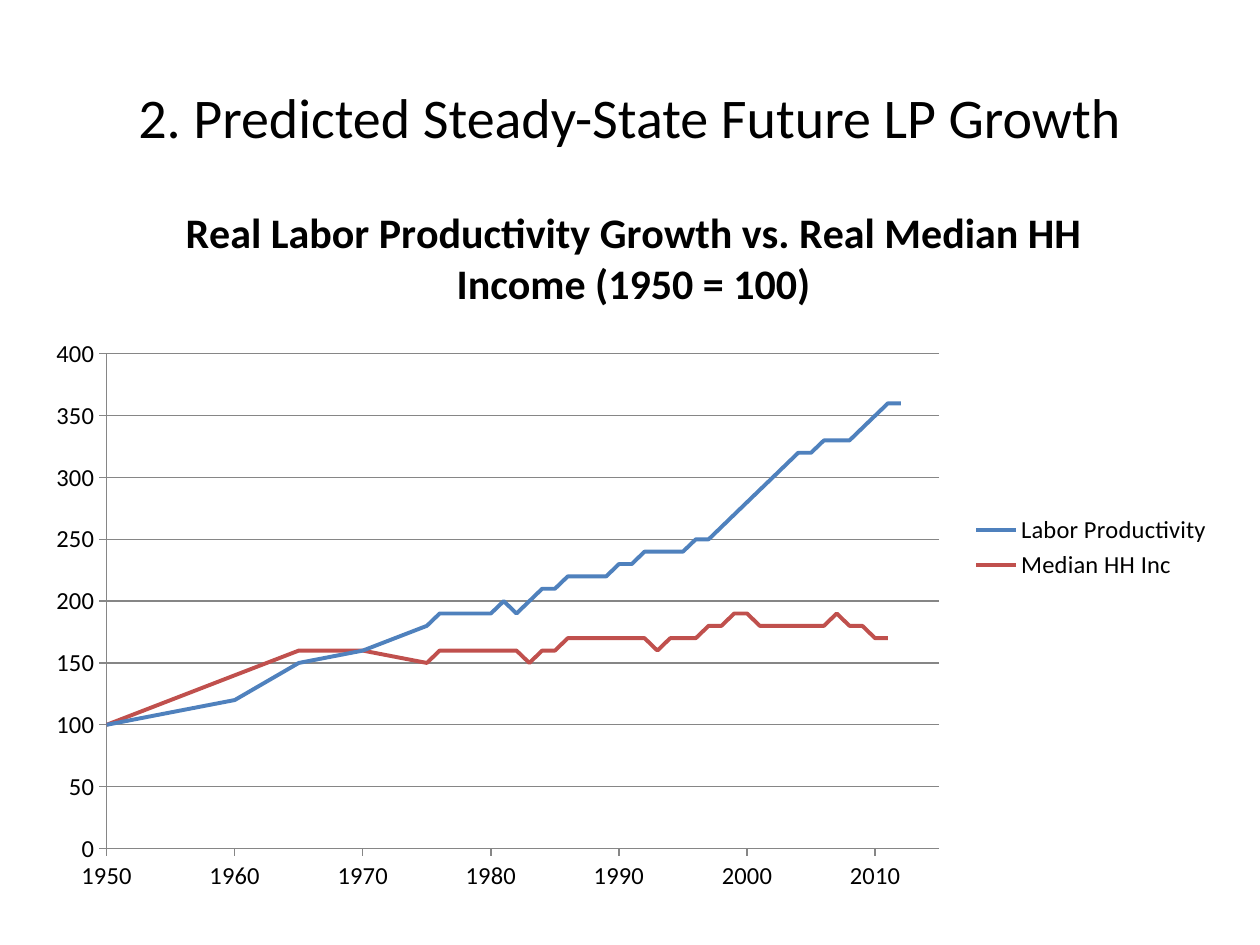
from lxml import etree
from pptx import Presentation, util as u
from pptx.chart.data import XyChartData
from pptx.dml.color import RGBColor
from pptx.enum import chart as ch, text
from pptx.oxml import ns

BLACK = RGBColor(0x00, 0x00, 0x00)
GRAY = RGBColor(0x86, 0x86, 0x86)
BLUE = RGBColor(0x4F, 0x81, 0xBD)
RED = RGBColor(0xC0, 0x50, 0x4D)
FONT = "Calibri"


def set_font(f, size, bold=False):
    f.name = FONT
    f.size = u.Pt(size)
    f.bold = bold
    f.color.rgb = BLACK


def set_layout(parent, before, **settings):
    for old in parent.findall(ns.qn("c:layout")):
        parent.remove(old)
    layout = etree.Element(ns.qn("c:layout"))
    manual = etree.SubElement(layout, ns.qn("c:manualLayout"))
    for tag, val in settings.items():
        etree.SubElement(manual, ns.qn("c:" + tag)).set("val", str(val))
    parent.find(ns.qn(before)).addprevious(layout)


years = [*range(1950, 1975, 5), *range(1975, 2013)]
series = [
    ("Labor Productivity", BLUE, [
        100, 110, 120, 150, 160, 180, 190, 190, 190, 190, 190, 200, 190, 200, 210,
        210, 220, 220, 220, 220, 230, 230, 240, 240, 240, 240, 250, 250, 260, 270,
        280, 290, 300, 310, 320, 320, 330, 330, 330, 340, 350, 360, 360]),
    ("Median HH Inc", RED, [
        100, 120, 140, 160, 160, 150, 160, 160, 160, 160, 160, 160, 160, 150, 160,
        160, 170, 170, 170, 170, 170, 170, 170, 160, 170, 170, 170, 180, 180, 190,
        190, 180, 180, 180, 180, 180, 180, 190, 180, 180, 170, 170]),
]

prs = Presentation()
prs.slide_width, prs.slide_height = u.Inches(10), u.Inches(7.5)
W, H = prs.slide_width, prs.slide_height
s = prs.slides.add_slide(prs.slide_layouts[5])

sp = s.shapes.title
sp.left, sp.top = int(W * 0.05), int(H * 0.04)
sp.width, sp.height = int(W * 0.9), int(H / 6)
tf = sp.text_frame
tf.text = "2. Predicted Steady-State Future LP Growth"
tf.vertical_anchor = text.MSO_ANCHOR.MIDDLE
p = tf.paragraphs[0]
p.alignment = text.PP_ALIGN.CENTER
set_font(p.runs[0].font, 32)

data = XyChartData()
for name, color, values in series:
    ser = data.add_series(name)
    for year, value in zip(years, values):
        ser.add_data_point(year, value)

margin = u.Inches(0.28)
chart = s.shapes.add_chart(
    ch.XL_CHART_TYPE.XY_SCATTER_LINES_NO_MARKERS,
    margin, int(H * 0.2), W - 2 * margin, u.Inches(5.69), data).chart
set_font(chart.font, 10)

chart.has_title = True
title = chart.chart_title
tf = title.text_frame
tf.text = "Real Labor Productivity Growth vs. Real Median HH Income (1950 = 100)"
set_font(tf.paragraphs[0].runs[0].font, 24, True)
title.include_in_layout = False

chart.has_legend = True
chart.legend.position = ch.XL_LEGEND_POSITION.RIGHT
chart.legend.include_in_layout = False
set_font(chart.legend.font, 14)

for axis, low, high, step in ((chart.category_axis, 1950, 2015, 10),
                              (chart.value_axis, 0, 400, 50)):
    axis.minimum_scale, axis.maximum_scale = low, high
    axis.major_unit = step
    axis.major_tick_mark = ch.XL_TICK_MARK.OUTSIDE
    axis.minor_tick_mark = ch.XL_TICK_MARK.NONE
    axis.has_major_gridlines = False
    axis.tick_labels.number_format = "General"
    axis.tick_labels.number_format_is_linked = False
    set_font(axis.tick_labels.font, 14)
    axis.format.line.color.rgb = GRAY
    axis.format.line.width = u.Pt(0.75)

grid = chart.value_axis.major_gridlines.format.line
grid.color.rgb = GRAY
grid.width = u.Pt(0.75)

plot = chart.plots[0]
plot.vary_by_categories = False
for ser, (name, color, values) in zip(plot.series, series):
    ser.smooth = False
    ser.marker.style = ch.XL_MARKER_STYLE.NONE
    ser.format.line.color.rgb = color
    ser.format.line.width = u.Pt(2.25)

area = chart.element.find(".//" + ns.qn("c:plotArea"))
set_layout(area, "c:scatterChart", layoutTarget="inner", xMode="edge",
           yMode="edge", x=0.06, y=0.23, w=0.7, h=0.69)
set_layout(title.element if hasattr(title, "element")
           else chart.element.find(".//" + ns.qn("c:title")),
           "c:overlay", xMode="edge", yMode="edge", x=0.12, y=0.01)

prs.save("out.pptx")
